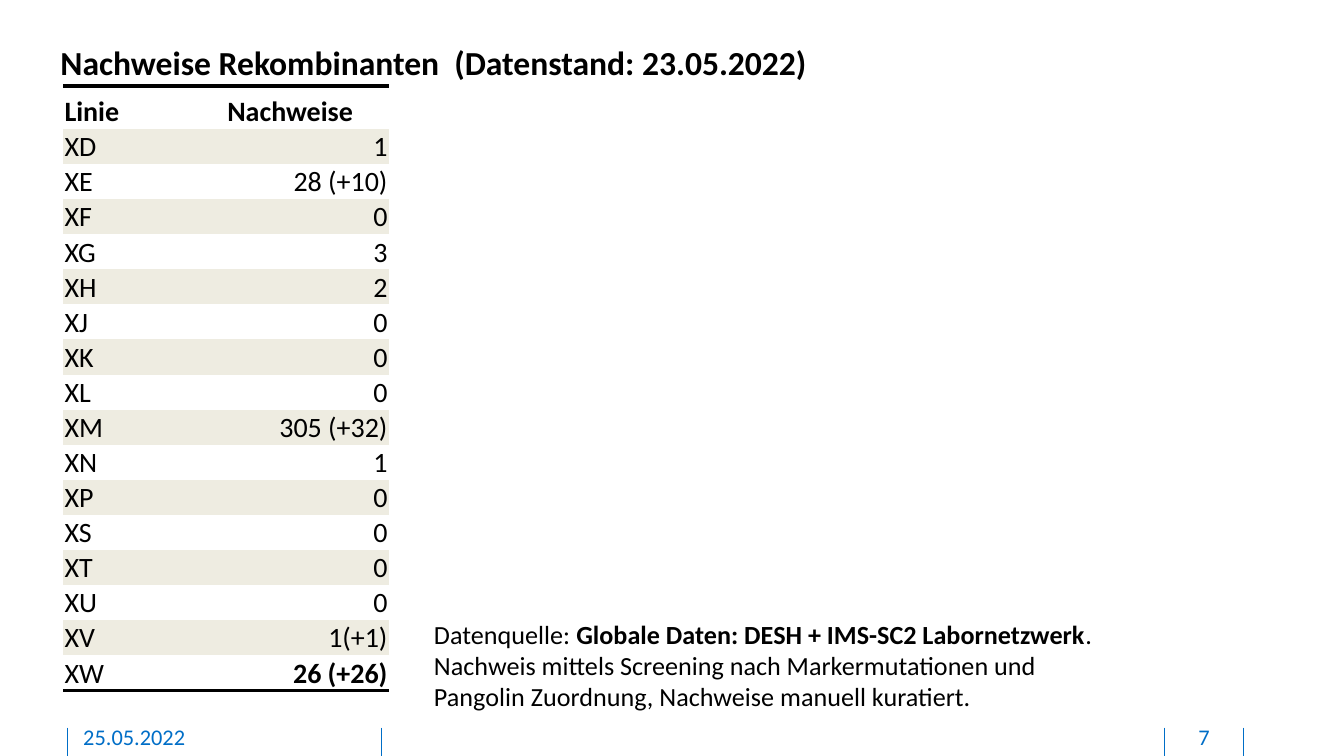
from dataclasses import dataclass

import pptx
import pptx.dml.color
import pptx.enum.shapes
import pptx.enum.text
import pptx.oxml
import pptx.oxml.ns
import pptx.util
from lxml import etree

Pt = pptx.util.Pt
Align = pptx.enum.text.PP_ALIGN
Anchor = pptx.enum.text.MSO_ANCHOR
AutoSize = pptx.enum.text.MSO_AUTO_SIZE
qn = pptx.oxml.ns.qn


@dataclass(frozen=True)
class Theme:
    """Colours, font and type sizes of the slide."""
    font: str = "Calibri"
    ink: str = "000000"
    accent: str = "006EC7"
    band: str = "EEECE1"
    plain: str = "FFFFFF"
    title: float = 18
    table: float = 15
    note: float = 14
    footer: float = 12
    rule: float = 2
    hairline: float = 0.5


THEME = Theme()
NO_TABLE_STYLE = "{2D5ABB26-0587-4C30-8999-92F81FD0307C}"
COUNTS = [
    ("XD", "1"), ("XE", "28 (+10)"), ("XF", "0"), ("XG", "3"),
    ("XH", "2"), ("XJ", "0"), ("XK", "0"), ("XL", "0"),
    ("XM", "305 (+32)"), ("XN", "1"), ("XP", "0"), ("XS", "0"),
    ("XT", "0"), ("XU", "0"), ("XV", "1(+1)"), ("XW", "26 (+26)"),
]
NOTE = [
    [("Datenquelle: ", False),
     ("Globale Daten: DESH + IMS-SC2 Labornetzwerk", True), (".", False)],
    [("Nachweis mittels Screening nach Markermutationen und", False)],
    [("Pangolin Zuordnung, Nachweise manuell kuratiert.", False)],
]


def rgb(code):
    """Turn a hex code into a colour."""
    return pptx.dml.color.RGBColor.from_string(code)


def style(paragraph, size, color=THEME.ink, bold=False, align=Align.LEFT):
    """Format a whole paragraph."""
    paragraph.alignment = align
    font = paragraph.font
    font.name, font.size, font.bold = THEME.font, Pt(size), bold
    font.color.rgb = rgb(color)


def add_title(slide, text, left, top, width, height):
    """Place the heading in the title placeholder."""
    title = slide.shapes.title
    title.left, title.top, title.width, title.height = map(Pt, (left, top, width, height))
    frame = title.text_frame
    frame.text = text
    frame.vertical_anchor = Anchor.TOP
    frame.auto_size = AutoSize.SHAPE_TO_FIT_TEXT
    style(frame.paragraphs[0], THEME.title, bold=True)


def add_rule(cell, side):
    """Draw a solid rule on one side of a table cell."""
    border = pptx.oxml.parse_xml(
        f'<a:{side} xmlns:a="http://schemas.openxmlformats.org/drawingml/2006/main" '
        f'w="{Pt(THEME.rule)}"><a:solidFill><a:srgbClr val="{THEME.ink}"/>'
        f'</a:solidFill></a:{side}>')
    cell._tc.get_or_add_tcPr().insert(0, border)


def fill_cell(cell, text, bold, align, fill):
    """Write and format one table cell."""
    cell.margin_left = cell.margin_right = cell.margin_top = Pt(0.7)
    cell.margin_bottom = Pt(0)
    cell.vertical_anchor = Anchor.BOTTOM
    cell.text = text
    style(cell.text_frame.paragraphs[0], THEME.table, bold=bold, align=align)
    if fill:
        cell.fill.solid()
        cell.fill.fore_color.rgb = rgb(fill)
    else:
        cell.fill.background()


def add_counts(slide, left, top, width, height, header_height=23):
    """Build the banded table of recombinant lineages."""
    rows = [("Linie", "Nachweise"), *COUNTS]
    last = len(rows) - 1
    table = slide.shapes.add_table(
        len(rows), 2, Pt(left), Pt(top), Pt(width), Pt(height)).table
    table.first_row = table.horz_banding = False
    table._tbl.tblPr.find(qn("a:tableStyleId")).text = NO_TABLE_STYLE
    for column in table.columns:
        column.width = Pt(width / 2)
    for r, row in enumerate(rows):
        table.rows[r].height = Pt(header_height if r == 0 else (height - header_height) / last)
        fill = None if r == last else THEME.band if r % 2 else THEME.plain
        for c, text in enumerate(row):
            cell = table.cell(r, c)
            bold = r == 0 or (r == last and c == 1)
            fill_cell(cell, text, bold, Align.RIGHT if r and c else Align.LEFT, fill)
            if r in (0, last):
                add_rule(cell, "lnB" if r else "lnT")


def add_note(slide, left, top, width, height):
    """Place the data source note."""
    frame = slide.shapes.add_textbox(*map(Pt, (left, top, width, height))).text_frame
    frame.word_wrap = False
    frame.auto_size = AutoSize.SHAPE_TO_FIT_TEXT
    for i, runs in enumerate(NOTE):
        paragraph = frame.add_paragraph() if i else frame.paragraphs[0]
        style(paragraph, THEME.note)
        for text, bold in runs:
            run = paragraph.add_run()
            run.text = text
            if bold:
                run.font.bold = True


def add_footer(slide, left, top, width, height):
    """Place the date and page number between thin dividers."""
    right = left + width
    for x in (left, left + 168.5, right - 42, right):
        divider = slide.shapes.add_connector(
            pptx.enum.shapes.MSO_CONNECTOR.STRAIGHT,
            Pt(x), Pt(top + 2.5), Pt(x), Pt(top + height))
        divider.line.color.rgb = rgb(THEME.accent)
        divider.line.width = Pt(THEME.hairline)
        etree.SubElement(divider._element.spPr, qn("a:effectLst"))
    for text, x, span, align in (("25.05.2022", left + 8.6, 146, Align.LEFT),
                                 ("7", right - 40.5, 39, Align.CENTER)):
        frame = slide.shapes.add_textbox(Pt(x), Pt(top), Pt(span), Pt(15)).text_frame
        frame.margin_left = frame.margin_right = frame.margin_top = Pt(0)
        frame.word_wrap = True
        frame.text = text
        style(frame.paragraphs[0], THEME.footer, THEME.accent, align=align)


def main():
    """Build and save the slide."""
    deck = pptx.Presentation()
    deck.slide_width, deck.slide_height = Pt(720), Pt(405)
    slide = deck.slides.add_slide(deck.slide_layouts.get_by_name("Title Only"))
    add_title(slide, "Nachweise Rekombinanten  (Datenstand: 23.05.2022)", 25.2, 18.7, 450, 51)
    add_counts(slide, 33.9, 46.1, 174.4, 324)
    add_note(slide, 225.4, 327.6, 368.6, 80)
    add_footer(slide, 36, 387.4, 630, 17.6)
    deck.save("out.pptx")


if __name__ == "__main__":
    main()
